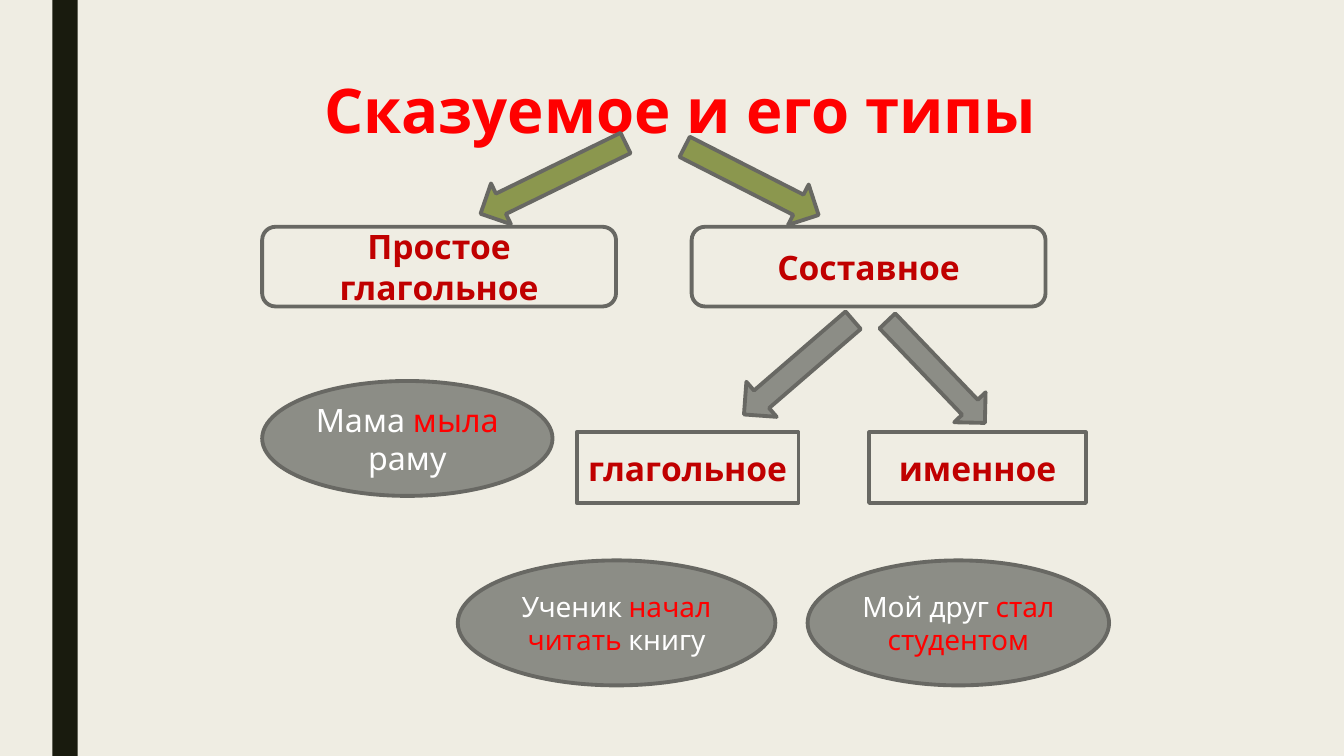
from pptx import Presentation
from pptx.dml.color import RGBColor
from pptx.enum.shapes import MSO_SHAPE
from pptx.enum.text import MSO_ANCHOR, PP_ALIGN
from pptx.util import Inches, Pt

RECTANGLE = MSO_SHAPE.RECTANGLE
ROUNDED = MSO_SHAPE.ROUNDED_RECTANGLE
ELLIPSE = MSO_SHAPE.OVAL
DOWN_ARROW = MSO_SHAPE.DOWN_ARROW
TOP, MIDDLE = MSO_ANCHOR.TOP, MSO_ANCHOR.MIDDLE
CENTER = PP_ALIGN.CENTER

FONT = "Karla"
CREAM = RGBColor(0xEF, 0xED, 0xE3)
DARK = RGBColor(0x19, 0x1B, 0x0E)
OUTLINE = RGBColor(0x68, 0x68, 0x63)
GREY = RGBColor(0x8C, 0x8D, 0x86)
OLIVE = RGBColor(0x8B, 0x97, 0x4E)
RED = RGBColor(0xFF, 0x00, 0x00)
DARK_RED = RGBColor(0xC0, 0x00, 0x00)
WHITE = RGBColor(0xFF, 0xFF, 0xFF)


def write_text(shape, runs, size, bold=False, anchor=MIDDLE, line_spacing=None):
    """Fill a shape with one centred paragraph of (text, colour) runs."""
    frame = shape.text_frame
    frame.word_wrap = True
    frame.vertical_anchor = anchor
    paragraph = frame.paragraphs[0]
    paragraph.alignment = CENTER
    if line_spacing:
        paragraph.line_spacing = line_spacing
    for text, color in runs:
        run = paragraph.add_run()
        run.text = text
        run.font.name = FONT
        run.font.size = Pt(size)
        run.font.bold = bold
        run.font.color.rgb = color


def place(shape, left, top, width, height):
    shape.left, shape.top = Inches(left), Inches(top)
    shape.width, shape.height = Inches(width), Inches(height)


def add_figure(slide, kind, box, fill, outline=OUTLINE, rotation=0):
    shape = slide.shapes.add_shape(kind, *[Inches(length) for length in box])
    shape.shadow.inherit = False
    shape.fill.solid()
    shape.fill.fore_color.rgb = fill
    if outline is None:
        shape.line.fill.background()
    else:
        shape.line.color.rgb = outline
        shape.line.width = Pt(2.75)
    shape.rotation = rotation
    return shape


def add_type_box(slide, kind, box, text):
    write_text(add_figure(slide, kind, box, CREAM), [(text, DARK_RED)], 24, bold=True)


def add_example(slide, box, runs, size):
    write_text(add_figure(slide, ELLIPSE, box, GREY), runs, size)


def main():
    presentation = Presentation()
    presentation.slide_width = Inches(13.33)
    presentation.slide_height = Inches(7.5)
    slide = presentation.slides.add_slide(presentation.slide_layouts[5])
    slide.background.fill.solid()
    slide.background.fill.fore_color.rgb = CREAM

    # Side bar and title
    add_figure(slide, RECTANGLE, (0.52, 0, 0.25, 7.5), DARK, outline=None)
    title = slide.shapes.title
    place(title, 1.5, 0.75, 10.5, 1.62)
    write_text(title, [("Сказуемое и его типы", RED)], 44, bold=True,
               anchor=TOP, line_spacing=0.89)

    # Types of predicate
    for kind, box, text in (
        (ROUNDED, (2.6, 2.25, 3.51, 0.79), "Простое глагольное"),
        (RECTANGLE, (5.72, 4.29, 2.2, 0.7), "глагольное"),
        (RECTANGLE, (8.62, 4.29, 2.15, 0.7), "именное"),
        (ROUNDED, (6.86, 2.25, 3.51, 0.79), "Составное"),
    ):
        add_type_box(slide, kind, box, text)

    # Arrows from each level to the next
    for box, rotation, fill in (
        ((5.26, 0.97, 0.45, 1.6), 64, OLIVE),
        ((7.23, 1.05, 0.45, 1.49), 297, OLIVE),
        ((7.69, 2.93, 0.46, 1.43), 49.2, GREY),
        ((9.07, 2.99, 0.43, 1.4), 316.3, GREY),
    ):
        add_figure(slide, DOWN_ARROW, box, fill, rotation=rotation)

    # Example sentences with the predicate in red
    add_example(slide, (2.6, 3.78, 2.88, 1.14),
                [("Мама ", WHITE), ("мыла", RED), (" раму", WHITE)], 23)
    add_example(slide, (4.54, 5.56, 3.15, 1.24),
                [("Ученик ", WHITE), ("начал читать", RED), (" книгу", WHITE)], 20)
    add_example(slide, (8.01, 5.56, 2.99, 1.24),
                [("Мой друг ", WHITE), ("стал студентом", RED)], 20)

    presentation.save("out.pptx")


if __name__ == "__main__":
    main()
